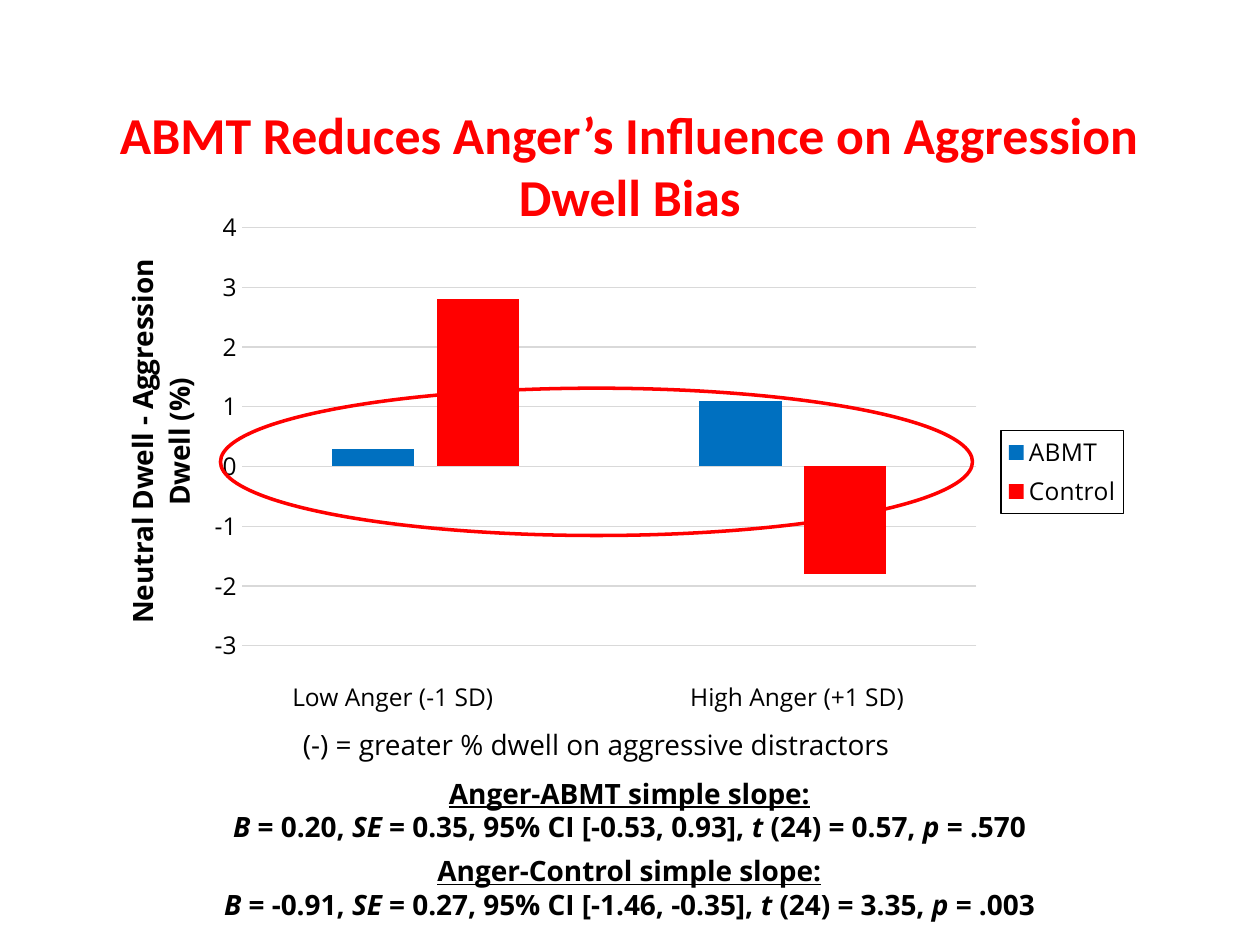
from dataclasses import dataclass

from lxml import etree
from pptx import Presentation
from pptx import util as u
from pptx.chart.data import CategoryChartData
from pptx.dml.color import RGBColor
from pptx.enum import chart as ch, shapes, text
from pptx.oxml import parse_xml
from pptx.oxml.ns import nsdecls, qn


@dataclass
class Theme:
    red: str = "FF0000"
    blue: str = "0070C0"
    black: str = "000000"
    grid: str = "D9D9D9"
    body: str = "Open Sans"
    head: str = "Calibri"
    title: float = 29.6
    note: float = 16
    label: float = 14


def cm(*box):
    return [u.Cm(n) for n in box]


def rgb(code):
    return RGBColor.from_string(code)


def place(parent, after=None, **spots):
    old = parent.find(qn("c:layout"))
    if old is not None:
        parent.remove(old)
    lay = parse_xml(f"<c:layout {nsdecls('c')}><c:manualLayout/></c:layout>")
    for tag, val in spots.items():
        etree.SubElement(lay[0], qn(f"c:{tag}"), val=str(val))
    if after is None:
        parent.insert(0, lay)
    else:
        after.addnext(lay)


class Deck:
    def __init__(self, theme):
        self.theme = theme
        self.file = Presentation()
        self.file.slide_width, self.file.slide_height = cm(25.4, 19.05)
        self.slide = self.file.slides.add_slide(self.file.slide_layouts[6])

    def style(self, font, size, bold=False, color=None, face=None):
        font.name = face or self.theme.body
        font.size = u.Pt(size)
        font.bold = bold
        font.color.rgb = rgb(color or self.theme.black)

    def text(self, box, lines, size, wrap=True, mid=False, **look):
        frame = self.slide.shapes.add_textbox(*cm(*box)).text_frame
        frame.word_wrap = wrap
        if mid:
            frame.vertical_anchor = text.MSO_ANCHOR.MIDDLE
        for i, line in enumerate(lines):
            para = frame.paragraphs[0] if i == 0 else frame.add_paragraph()
            para.alignment = text.PP_ALIGN.CENTER
            for words, mark in line:
                run = para.add_run()
                run.text = words
                self.style(run.font, size, **look)
                run.font.italic = mark == "i"
                run.font.underline = mark == "u"
        return frame

    def chart(self, box, cats, rows, title):
        t = self.theme
        data = CategoryChartData()
        data.categories = cats
        for name, vals, _ in rows:
            data.add_series(name, vals)
        chart = self.slide.shapes.add_chart(
            ch.XL_CHART_TYPE.COLUMN_CLUSTERED, *cm(*box), data).chart
        self.style(chart.font, t.label)
        chart.has_title = False
        plot = chart.plots[0]
        plot.gap_width, plot.overlap = 219, -27
        plot.vary_by_categories = False
        for bars, (_, _, color) in zip(plot.series, rows):
            bars.format.fill.solid()
            bars.format.fill.fore_color.rgb = rgb(color)
            bars.invert_if_negative = False
        chart.category_axis.visible = False
        self.axis(chart.value_axis, title)
        area = chart.element.find(".//" + qn("c:plotArea"))
        place(area, layoutTarget="inner", xMode="edge", yMode="edge",
              x=0.15, y=0.05, w=0.7, h=0.77)
        self.legend(chart)

    def axis(self, axis, title):
        axis.minimum_scale, axis.maximum_scale, axis.major_unit = -3, 4, 1
        axis.major_tick_mark = axis.minor_tick_mark = ch.XL_TICK_MARK.NONE
        axis.format.line.fill.background()
        self.style(axis.tick_labels.font, self.theme.label)
        grid = axis.major_gridlines.format.line
        grid.color.rgb = rgb(self.theme.grid)
        grid.width = u.Pt(0.75)
        frame = axis.axis_title.text_frame
        frame.text = title
        self.style(frame.paragraphs[0].runs[0].font, self.theme.note, True)
        node = axis.axis_title.element
        turn = node.find(".//" + qn("a:bodyPr"))
        turn.set("rot", "-5400000")
        turn.set("vert", "horz")
        place(node, node.find(qn("c:tx")), xMode="edge", yMode="edge",
              x=0.03, y=0.1)

    def legend(self, chart):
        chart.has_legend = True
        key = chart.legend
        key.position = ch.XL_LEGEND_POSITION.RIGHT
        key.include_in_layout = False
        self.style(key.font, self.theme.label)
        edge = parse_xml(
            f'<c:spPr {nsdecls("c", "a")}><a:ln w="9525"><a:solidFill>'
            f'<a:srgbClr val="{self.theme.black}"/></a:solidFill></a:ln></c:spPr>')
        chart.element.find(f".//{qn('c:legend')}/{qn('c:overlay')}").addnext(edge)

    def ring(self, box, turn):
        ring = self.slide.shapes.add_shape(shapes.MSO_SHAPE.OVAL, *cm(*box))
        ring.rotation = turn
        ring.shadow.inherit = False
        ring.fill.background()
        ring.line.color.rgb = rgb(self.theme.red)
        ring.line.width = u.Pt(2)


def slope(name, b, se, ci, t, p):
    return [
        [(f"Anger-{name} simple slope:", "u")],
        [("B", "i"), (f" = {b}, ", ""), ("SE", "i"),
         (f" = {se}, 95% CI [{ci}], ", ""), ("t ", "i"),
         (f"(24) = {t}, ", ""), ("p", "i"), (f" = {p}", "")],
    ]


def main():
    t = Theme()
    deck = Deck(t)
    deck.chart((1.7, 4.04, 21.16, 10.95), ["1", "2"],
               [("ABMT", (0.3, 1.1), t.blue), ("Control", (2.8, -1.8), t.red)],
               "Neutral Dwell - Aggression Dwell (%)")
    for x, name in ((4.92, "Low Anger (-1 SD)"), (13.07, "High Anger (+1 SD)")):
        deck.text((x, 13.63, 6, 0.85), [[(name, "")]], t.label, mid=True)
    deck.text((5.77, 14.55, 12.5, 0.94),
              [[("(-) = greater % dwell on aggressive distractors", "")]],
              t.note, wrap=False)
    stats = deck.text(
        (4.22, 15.52, 16.94, 3.89),
        slope("ABMT", "0.20", "0.35", "-0.53, 0.93", "0.57", ".570")
        + slope("Control", "-0.91", "0.27", "-1.46, -0.35", "3.35", ".003"),
        t.note, bold=True)
    stats.paragraphs[1].space_after = u.Pt(6)
    deck.text((1.27, 2.13, 22.86, 2.39),
              [[("ABMT Reduces Anger’s Influence on Aggression Dwell Bias", "")]],
              t.title, mid=True, bold=True, color=t.red, face=t.head)
    deck.ring((10.54, 1.73, 2.97, 15.16), 270)
    deck.file.save("out.pptx")


if __name__ == "__main__":
    main()
